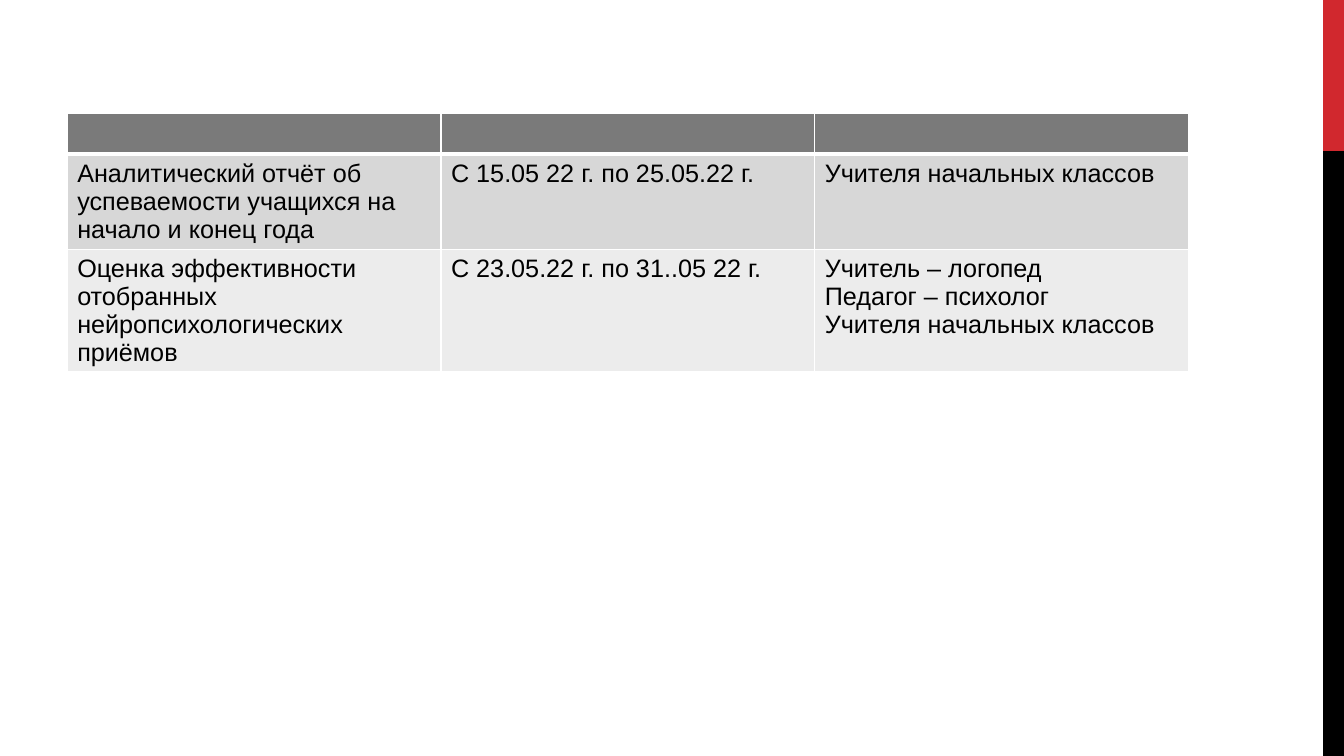
"""Build a slide with a schedule table and a two-colour side band."""
from dataclasses import dataclass

import pptx
import pptx.dml.color
import pptx.enum.shapes
import pptx.oxml
import pptx.oxml.ns
import pptx.util

PX = 9525
COLORS = {
    "red": "D1282E",
    "black": "000000",
    "white": "FFFFFF",
    "header": "7A7A7A",
    "odd": "D7D7D7",
    "even": "ECECEC",
}


@dataclass(frozen=True)
class Bar:
    top: int
    height: int
    color: str


@dataclass(frozen=True)
class Row:
    color: str
    top_line: int
    bottom_line: int
    texts: tuple[str, str, str]


BAR_LEFT, BAR_WIDTH = 1260, 20
BARS = (Bar(0, 144, "red"), Bar(144, 576, "black"))

TABLE_LEFT, TABLE_TOP = 64, 108
COL_WIDTH, ROW_HEIGHT = 356, 39
ROWS = (
    Row("header", 1, 3, ("", "", "")),
    Row("odd", 3, 1, (
        "Аналитический отчёт об успеваемости учащихся на начало и конец года",
        "С 15.05 22 г. по 25.05.22 г.",
        "Учителя начальных классов",
    )),
    Row("even", 1, 1, (
        "Оценка эффективности отобранных нейропсихологических приёмов",
        "С 23.05.22 г. по 31..05 22 г.",
        "Учитель – логопед\nПедагог – психолог\nУчителя начальных классов",
    )),
)


def px(n: int) -> pptx.util.Emu:
    return pptx.util.Emu(n * PX)


def rgb(name: str) -> pptx.dml.color.RGBColor:
    return pptx.dml.color.RGBColor.from_string(COLORS[name])


def draw_bar(slide, bar: Bar) -> None:
    sp = slide.shapes.add_shape(
        pptx.enum.shapes.MSO_SHAPE.RECTANGLE,
        px(BAR_LEFT), px(bar.top), px(BAR_WIDTH), px(bar.height),
    )
    sp.shadow.inherit = False
    sp.fill.solid()
    sp.fill.fore_color.rgb = rgb(bar.color)
    sp.line.fill.background()


def add_border(cell, side: str, points: int) -> None:
    width = pptx.util.Pt(points)
    cell._tc.get_or_add_tcPr().append(pptx.oxml.parse_xml(
        f'<a:ln{side} {pptx.oxml.ns.nsdecls("a")} w="{width}"><a:solidFill>'
        f'<a:srgbClr val="{COLORS["white"]}"/></a:solidFill></a:ln{side}>'
    ))


def format_cell(cell, row: Row, text: str) -> None:
    sides = {"L": 1, "R": 1, "T": row.top_line, "B": row.bottom_line}
    for side, points in sides.items():
        add_border(cell, side, points)
    cell.fill.solid()
    cell.fill.fore_color.rgb = rgb(row.color)
    cell.text_frame.text = text
    for p in cell.text_frame.paragraphs:
        for r in p.runs:
            r.font.name = "Arial"
            r.font.size = pptx.util.Pt(18)
            r.font.color.rgb = rgb("black")


def draw_table(slide, rows: tuple[Row, ...]) -> None:
    n_cols = len(rows[0].texts)
    table = slide.shapes.add_table(
        len(rows), n_cols, px(TABLE_LEFT), px(TABLE_TOP),
        px(COL_WIDTH * n_cols), px(ROW_HEIGHT * len(rows)),
    ).table
    for i, row in enumerate(rows):
        for j, text in enumerate(row.texts):
            format_cell(table.cell(i, j), row, text)


def main() -> None:
    prs = pptx.Presentation()
    prs.slide_width, prs.slide_height = px(1280), px(720)
    slide = prs.slides.add_slide(prs.slide_layouts[6])
    for bar in BARS:
        draw_bar(slide, bar)
    draw_table(slide, ROWS)
    prs.save("out.pptx")


if __name__ == "__main__":
    main()
